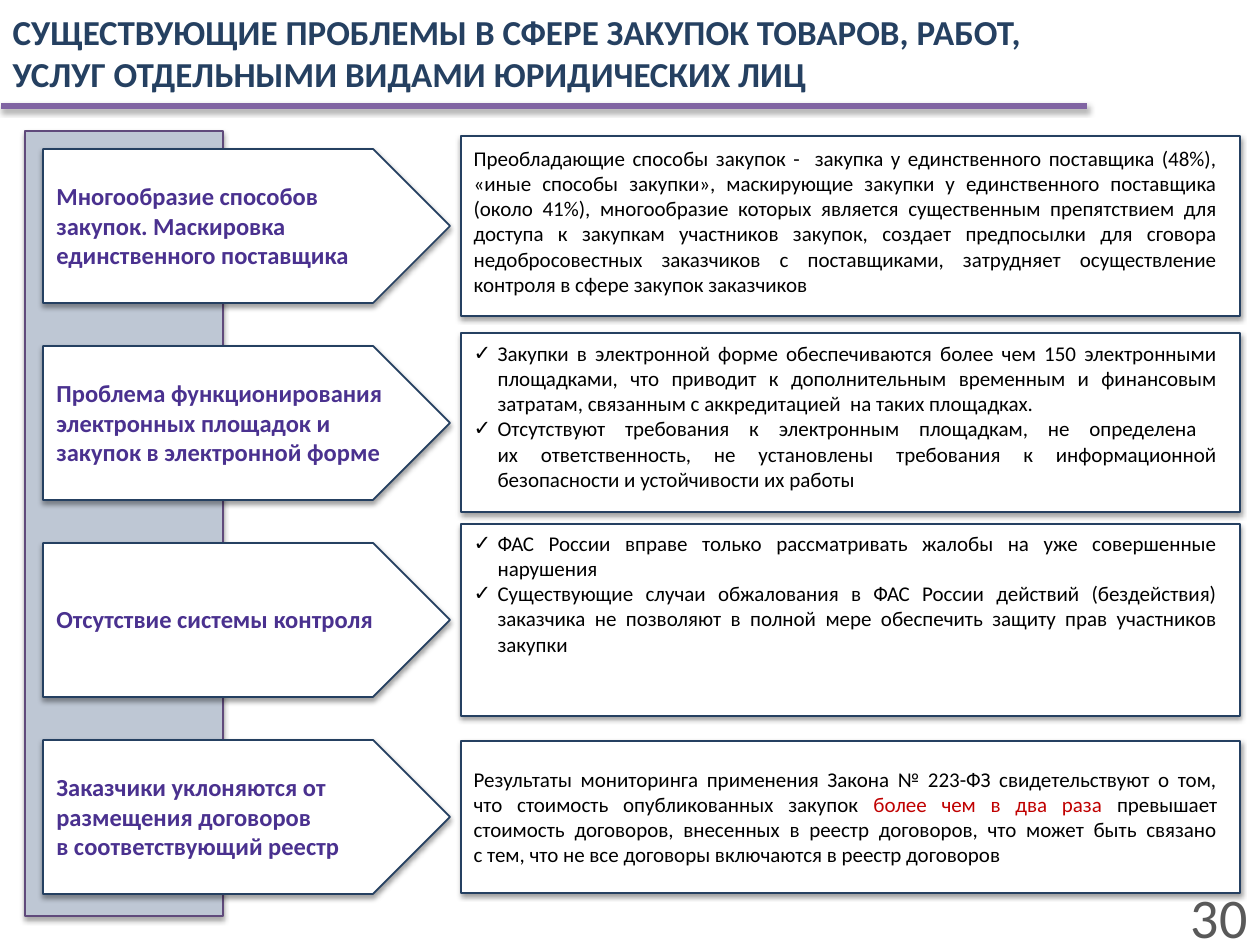
import pptx
import pptx.util
import pptx.dml.color
import pptx.enum.shapes
import pptx.enum.text
import pptx.oxml
import pptx.oxml.ns
import lxml.etree

PX = pptx.util.Inches(1) / 126
THEME = {
    "font": "Calibri",
    "navy": "254061", "violet": "4A318F", "purple": "8064A2", "plum": "604A7B",
    "band": "BEC7D4", "white": "FFFFFF", "black": "000000", "red": "C00000", "gray": "595959",
    "title": 20, "label": 14, "body": 12, "number": 32,
}
ALIGN = pptx.enum.text.PP_ALIGN
ANCHOR = pptx.enum.text.MSO_ANCHOR
FIT = pptx.enum.text.MSO_AUTO_SIZE
SHAPE = pptx.enum.shapes.MSO_SHAPE
RGB = pptx.dml.color.RGBColor.from_string


def decorate(sp, line, width, alpha, distance, fill=None):
    if fill:
        sp.fill.solid()
        sp.fill.fore_color.rgb = RGB(THEME[fill])
    sp.line.color.rgb = RGB(THEME[line])
    sp.line.width = pptx.util.Pt(width)
    sp.element.spPr.append(pptx.oxml.parse_xml(
        f'<a:effectLst {pptx.oxml.ns.nsdecls("a")}>'
        f'<a:outerShdw blurRad="40000" dist="{distance}" dir="5400000" rotWithShape="0">'
        f'<a:srgbClr val="000000"><a:alpha val="{alpha}000"/></a:srgbClr>'
        f'</a:outerShdw></a:effectLst>'))


def write(sp, box, paragraphs, size, color, bold=False, align=ALIGN.LEFT,
          anchor=ANCHOR.TOP, fit=FIT.NONE):
    sp.left, sp.top, sp.width, sp.height = [round(v * PX) for v in box]
    tf = sp.text_frame
    for name, value in {"word_wrap": True, "auto_size": fit, "vertical_anchor": anchor}.items():
        setattr(tf, name, value)
    for i, runs in enumerate(paragraphs):
        p = tf.paragraphs[0] if i == 0 else tf.add_paragraph()
        spacing = {"alignment": align, "line_spacing": 1.0,
                   "space_before": pptx.util.Pt(0), "space_after": pptx.util.Pt(0)}
        for name, value in spacing.items():
            setattr(p, name, value)
        for text, run_color in [(runs, color)] if isinstance(runs, str) else runs:
            for n, part in enumerate(text.split("\n")):
                if n:
                    p.add_line_break()
                r = p.add_run()
                r.text = part
                look = {"name": THEME["font"], "size": pptx.util.Pt(THEME[size]), "bold": bold}
                for name, value in look.items():
                    setattr(r.font, name, value)
                r.font.color.rgb = RGB(THEME[run_color])


labels = [
    ("Многообразие способов закупок. Маскировка единственного поставщика", 372, 102),
    ("Проблема функционирования электронных площадок и закупок в электронной форме", 372, 102),
    ("Отсутствие системы контроля", 372, 43),
    ("Заказчики уклоняются от размещения договоров \nв соответствующий реестр", 393, 102),
]
cards = [
    (136, 180, 139, 165, False, [
        "Преобладающие способы закупок -  закупка у единственного поставщика (48%), "
        "«иные способы закупки», маскирующие закупки у единственного поставщика (около 41%), "
        "многообразие которых является существенным препятствием для доступа к закупкам "
        "участников закупок, создает предпосылки для сговора недобросовестных заказчиков "
        "с поставщиками, затрудняет осуществление контроля в сфере закупок заказчиков"]),
    (333, 179, 334, 165, True, [
        "Закупки в электронной форме обеспечиваются более чем 150 электронными площадками, "
        "что приводит к дополнительным временным и финансовым затратам, "
        "связанным с аккредитацией  на таких площадках.",
        "Отсутствуют требования к электронным площадкам, не определена \nих ответственность, "
        "не установлены требования к информационной безопасности и устойчивости их работы"]),
    (524, 192, 524, 140, True, [
        "ФАС России вправе только рассматривать жалобы на уже совершенные нарушения",
        "Существующие случаи обжалования в ФАС России действий (бездействия) заказчика "
        "не позволяют в полной мере обеспечить защиту прав участников закупки"]),
    (741, 152, 760, 115, False, [[
        ("Результаты мониторинга применения Закона № 223-ФЗ свидетельствуют о том, "
         "что стоимость опубликованных закупок ", "black"),
        ("более чем в два раза ", "red"),
        ("превышает стоимость договоров, внесенных в реестр договоров, "
         "что может быть связано\nс тем, что не все договоры включаются в реестр договоров", "black")]]),
]

prs = pptx.Presentation()
prs.slide_width, prs.slide_height = round(1260 * PX), round(945 * PX)
s = prs.slides.add_slide(prs.slide_layouts.get_by_name("Comparison"))
title, *bodies = list(s.placeholders)

write(title, (0, 0, 1087, 105),
      ["СУЩЕСТВУЮЩИЕ ПРОБЛЕМЫ В СФЕРЕ ЗАКУПОК ТОВАРОВ, РАБОТ, "
       "УСЛУГ ОТДЕЛЬНЫМИ ВИДАМИ ЮРИДИЧЕСКИХ ЛИЦ"],
      "title", "navy", bold=True, anchor=ANCHOR.MIDDLE)

rule = s.shapes.add_connector(pptx.enum.shapes.MSO_CONNECTOR.STRAIGHT,
                              *[round(v * PX) for v in (1, 106, 1087, 106)])
decorate(rule, "purple", 3, 35, 23000)

band = s.shapes.add_shape(SHAPE.RECTANGLE, *[round(v * PX) for v in (25, 131, 198, 785)])
decorate(band, "plum", 0.75, 35, 23000, "band")

for i, (text, width, height) in enumerate(labels):
    top = 149 + 197 * i
    arrow = s.shapes.add_shape(SHAPE.PENTAGON, *[round(v * PX) for v in (43, top, 407, 154)])
    decorate(arrow, "navy", 1, 38, 20000, "white")
    label = s.shapes.add_textbox(0, 0, 0, 0)
    write(label, (44, top + (154 - height) // 2, width, height), [text],
          "label", "violet", bold=True, fit=FIT.SHAPE_TO_FIT_TEXT)

for body, (top, height, text_top, text_height, bulleted, paragraphs) in zip(bodies, cards):
    card = s.shapes.add_shape(SHAPE.RECTANGLE, *[round(v * PX) for v in (461, top, 779, height)])
    decorate(card, "navy", 0.75, 38, 20000, "white")
    write(body, (461, text_top, 769, text_height), paragraphs, "body", "black", align=ALIGN.JUSTIFY)
    card.element.addnext(body.element)
    indent = round(24 * PX) if bulleted else 0
    for p in body.text_frame.paragraphs:
        pPr = p._p.get_or_add_pPr()
        pPr.set("marL", str(indent))
        pPr.set("indent", str(-indent))
        tag = pptx.oxml.ns.qn("a:buChar" if bulleted else "a:buNone")
        bullet = lxml.etree.SubElement(pPr, tag)
        if bulleted:
            bullet.set("char", "✓")

number = s.shapes.add_textbox(0, 0, 0, 0)
write(number, (1177, 888, 83, 57), ["30"], "number", "gray",
      align=ALIGN.RIGHT, anchor=ANCHOR.MIDDLE)

prs.save("out.pptx")
